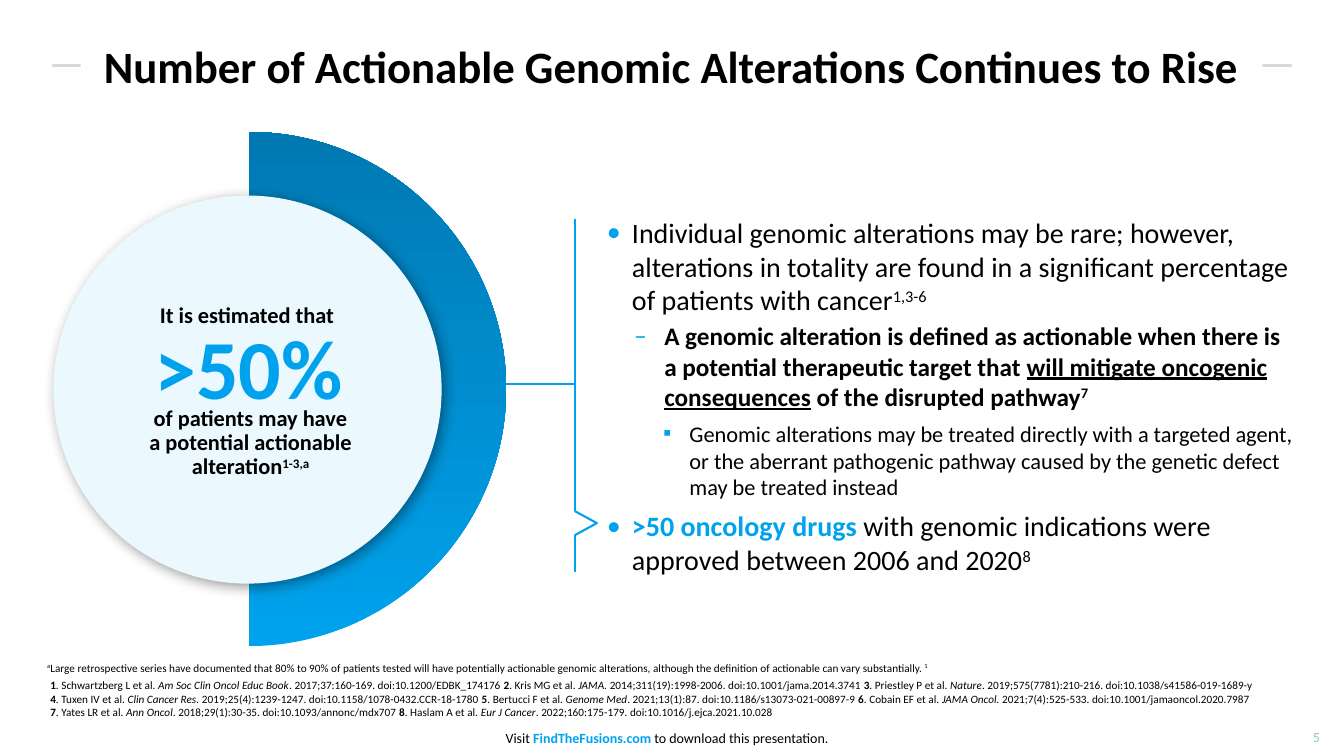
import pptx
from dataclasses import dataclass
from lxml import etree
from pptx.dml.color import RGBColor
from pptx.enum.shapes import MSO_CONNECTOR, MSO_SHAPE
from pptx.enum.text import MSO_ANCHOR, PP_ALIGN
from pptx.oxml.ns import qn
from pptx.util import Inches, Pt


@dataclass(frozen=True)
class Theme:
    font: str = "Calibri"
    ink: str = "000000"
    paper: str = "FFFFFF"
    accent: str = "00A2ED"
    deep: str = "0079B2"
    pale: str = "EBF9FF"
    rule: str = "D9D9D9"
    page: str = "8FC0CF"
    title_size: int = 32
    figure_size: int = 60
    caption_size: int = 16
    bullet_sizes: tuple = (20, 18, 16)
    note_size: int = 8
    footer_size: int = 10
    line_width: float = 1.5


THEME = Theme()
ARC_HANDLE = 0.55  # Bezier handle length of a quarter circle, per unit of radius

# Each run is (text, flags): b bold, i italic, u underline, ^ superscript, a accent colour
BULLETS = [
    (0, 0, [("Individual genomic alterations may be rare; however, alterations in totality "
             "are found in a significant percentage of patients with cancer", ""),
            ("1,3-6", "^")]),
    (1, 3, [("A genomic alteration is defined as actionable when there is \n"
             "a potential therapeutic target that ", "b"),
            ("will mitigate oncogenic consequences", "bu"),
            (" of the disrupted pathway", "b"), ("7", "b^")]),
    (2, 6, [("Genomic alterations may be treated directly with a targeted agent, or the "
             "aberrant pathogenic pathway caused by the genetic defect may be treated "
             "instead", "")]),
    (0, 6, [(">50 oncology drugs ", "ab"),
            ("with genomic indications were approved between 2006 and 2020", ""),
            ("8", "^")]),
]
# Bullet character, left margin and hanging indent for each depth
BULLET_STYLES = [("•", 0.25, -0.25), ("‒", 0.57, -0.3), ("▪", 0.82, -0.26)]

FOOTNOTE = [("a", "^"),
            ("Large retrospective series have documented that 80% to 90% of patients tested "
             "will have potentially actionable genomic alterations, although the definition "
             "of actionable can vary substantially.", ""), ("1", "^")]
REFERENCES = [
    ("Schwartzberg L", "Am Soc Clin Oncol Educ Book", ". 2017;37:160-169. doi:10.1200/EDBK_174176 "),
    ("Kris MG", "JAMA.", " 2014;311(19):1998-2006. doi:10.1001/jama.2014.3741 "),
    ("Priestley P", "Nature", ". 2019;575(7781):210-216. doi:10.1038/s41586-019-1689-y \n"),
    ("Tuxen IV", "Clin Cancer Res.", " 2019;25(4):1239-1247. doi:10.1158/1078-0432.CCR-18-1780 "),
    ("Bertucci F", "Genome Med", ". 2021;13(1):87. doi:10.1186/s13073-021-00897-9 "),
    ("Cobain EF", "JAMA Oncol. ", "2021;7(4):525-533. doi:10.1001/jamaoncol.2020.7987 \n"),
    ("Yates LR", "Ann Oncol", ". 2018;29(1):30-35. doi:10.1093/annonc/mdx707 "),
    ("Haslam A", "Eur J Cancer", ". 2022;160:175-179. doi:10.1016/j.ejca.2021.10.028"),
]


def rgb(value):
    return RGBColor.from_string(value)


def add_runs(paragraph, runs, size, color=THEME.ink):
    for text, flags in runs:
        for index, piece in enumerate(text.split("\n")):
            if index:
                line_break = paragraph._p.add_br()
                etree.SubElement(line_break, qn("a:rPr"), sz=str(size * 100))
            if not piece:
                continue
            run = paragraph.add_run()
            run.text = piece
            font = run.font
            font.name, font.size = THEME.font, Pt(size)
            font.bold, font.italic, font.underline = "b" in flags, "i" in flags, "u" in flags
            font.color.rgb = rgb(THEME.accent if "a" in flags else color)
            if "^" in flags:
                run._r.get_or_add_rPr().set("baseline", "30000")


def add_text_box(slide, box, anchor=MSO_ANCHOR.TOP, insets=(0.1, 0.1)):
    """Add an empty wrapping box; insets are the left and right margins."""
    text_box = slide.shapes.add_textbox(*map(Inches, box))
    frame = text_box.text_frame
    frame.word_wrap, frame.vertical_anchor = True, anchor
    frame.margin_left, frame.margin_right = map(Inches, insets)
    return text_box


def add_label(slide, box, runs, size, color=THEME.ink, align=PP_ALIGN.CENTER, spacing=0.9, **layout):
    label = add_text_box(slide, box, **layout)
    paragraph = label.text_frame.paragraphs[0]
    paragraph.alignment, paragraph.line_spacing = align, spacing
    add_runs(paragraph, runs, size, color)
    return label


def add_rule(slide, start, end, color=THEME.accent):
    points = map(Inches, (*start, *end))
    rule = slide.shapes.add_connector(MSO_CONNECTOR.STRAIGHT, *points)
    rule.line.color.rgb, rule.line.width = rgb(color), Pt(THEME.line_width)
    etree.SubElement(rule._element.spPr, qn("a:effectLst"))


def add_outline(slide, points, close):
    start, *rest = [(Inches(x), Inches(y)) for x, y in points]
    builder = slide.shapes.build_freeform(*start)
    builder.add_line_segments(rest, close=close)
    outline = builder.convert_to_shape()
    outline.shadow.inherit = False
    return outline


def set_indent(paragraph, left, first):
    properties = paragraph._p.get_or_add_pPr()
    properties.set("marL", str(Inches(left)))
    properties.set("indent", str(Inches(first)))
    return properties


def add_bullets(slide):
    frame = add_text_box(slide, (5.92, 2.09, 7.17, 3.9)).text_frame
    for index, (depth, space, runs) in enumerate(BULLETS):
        paragraph = frame.add_paragraph() if index else frame.paragraphs[0]
        character, left, first = BULLET_STYLES[depth]
        properties = set_indent(paragraph, left, first)
        bullet_color = etree.SubElement(properties, qn("a:buClr"))
        etree.SubElement(bullet_color, qn("a:srgbClr"), val=THEME.accent)
        etree.SubElement(properties, qn("a:buFont"), typeface=THEME.font)
        etree.SubElement(properties, qn("a:buChar"), char=character)
        paragraph.level = min(depth, 1)
        paragraph.space_before = Pt(space)
        add_runs(paragraph, runs, THEME.bullet_sizes[depth])


def add_references(slide):
    frame = add_text_box(slide, (0.34, 6.19, 12.49, 0.99), MSO_ANCHOR.BOTTOM).text_frame
    footnote, citations = frame.paragraphs[0], frame.add_paragraph()
    set_indent(footnote, 0.03, 0)
    add_runs(footnote, FOOTNOTE, THEME.note_size)
    set_indent(citations, 0.06, 0)
    citations.space_before = Pt(3)
    for number, (author, journal, details) in enumerate(REFERENCES, 1):
        add_runs(citations, [(str(number), "b"), (f". {author} et al. ", ""),
                             (journal, "i"), (details, "")], THEME.note_size)


def bend_quarter(segment, controls):
    """Turn a straight segment into a curve with two control points."""
    segment.tag = qn("a:cubicBezTo")
    for index, (x, y) in enumerate(controls):
        control = etree.Element(qn("a:pt"), x=str(Inches(x)), y=str(Inches(y)))
        segment.insert(index, control)


def add_half_disc(slide, left, top, radius):
    corners = [(left, top), (left + radius, top + radius), (left, top + 2 * radius)]
    half_disc = add_outline(slide, corners, close=True)
    handle = ARC_HANDLE * radius
    upper, lower = list(half_disc._element.iter(qn("a:lnTo")))
    bend_quarter(upper, [(handle, 0), (radius, radius - handle)])
    bend_quarter(lower, [(radius, radius + handle), (handle, 2 * radius)])
    half_disc.line.fill.background()
    half_disc.fill.gradient()
    half_disc.fill.gradient_angle = 90
    for stop, color, position in zip(half_disc.fill.gradient_stops, (THEME.accent, THEME.deep), (0, 1)):
        stop.color.rgb, stop.position = rgb(color), position


def add_disc(slide):
    disc = slide.shapes.add_shape(MSO_SHAPE.OVAL, *map(Inches, (0.53, 1.94, 3.85, 3.85)))
    disc.fill.solid()
    disc.fill.fore_color.rgb = rgb(THEME.pale)
    disc.line.fill.background()
    disc.shadow.inherit = False
    effects = disc._element.spPr.find(qn("a:effectLst"))
    shadow = etree.SubElement(effects, qn("a:outerShdw"), blurRad=str(Pt(10)), dist=str(Pt(3)),
                              dir="2700000", algn="tl", rotWithShape="0")
    shade = etree.SubElement(shadow, qn("a:srgbClr"), val=THEME.ink)
    etree.SubElement(shade, qn("a:alpha"), val="40000")


def add_bracket(slide, x, top, notch_top, notch_bottom, bottom):
    tip = (x + 0.22, (notch_top + notch_bottom) / 2)
    notch = add_outline(slide, [(x, notch_top), tip, (x, notch_bottom)], close=False)
    notch.fill.solid()
    notch.fill.fore_color.rgb = rgb(THEME.paper)
    notch.line.color.rgb, notch.line.width = rgb(THEME.accent), Pt(THEME.line_width)
    add_rule(slide, (x, notch_bottom), (x, bottom))
    add_rule(slide, (x, notch_top), (x, top))


def main():
    deck = pptx.Presentation()
    deck.slide_width, deck.slide_height = Inches(13.33), Inches(7.5)
    slide = deck.slides.add_slide(deck.slide_layouts[6])
    add_rule(slide, (0.52, 0.65), (12.81, 0.65), THEME.rule)
    add_rule(slide, (4.89, 3.81), (5.7, 3.81))
    title = add_label(slide, (0.8, 0.39, 11.72, 0.61),
                      [("Number of Actionable Genomic Alterations Continues to Rise", "b")],
                      THEME.title_size, insets=(0.2, 0.2))
    title.fill.solid()
    title.fill.fore_color.rgb = rgb(THEME.paper)
    add_label(slide, (13.02, 7.17, 0.31, 0.27), [("5", "")], THEME.footer_size, THEME.page,
              PP_ALIGN.LEFT, 1.0, anchor=MSO_ANCHOR.BOTTOM, insets=(0, 0))
    add_references(slide)
    add_bracket(slide, 5.7, 2.17, 5.07, 5.31, 5.67)
    add_label(slide, (0, 7.18, 13.33, 0.27),
              [("Visit ", ""), ("FindTheFusions.com", "ab"), (" to download this presentation.", "")],
              THEME.footer_size, spacing=1.0, anchor=MSO_ANCHOR.BOTTOM, insets=(0, 0.1))
    add_bullets(slide)
    add_half_disc(slide, 2.47, 1.31, 2.55)
    add_disc(slide)
    add_label(slide, (0.87, 3.19, 3.19, 0.85), [(">50%", "ab")], THEME.figure_size)
    add_label(slide, (0.87, 3.99, 3.23, 0.85),
              [("of patients may have\na potential actionable\nalteration", "b"), ("1-3,a", "b^")],
              THEME.caption_size)
    add_label(slide, (1, 2.97, 2.95, 0.63), [("It is estimated that ", "b")], THEME.caption_size)
    deck.save("out.pptx")


if __name__ == "__main__":
    main()
